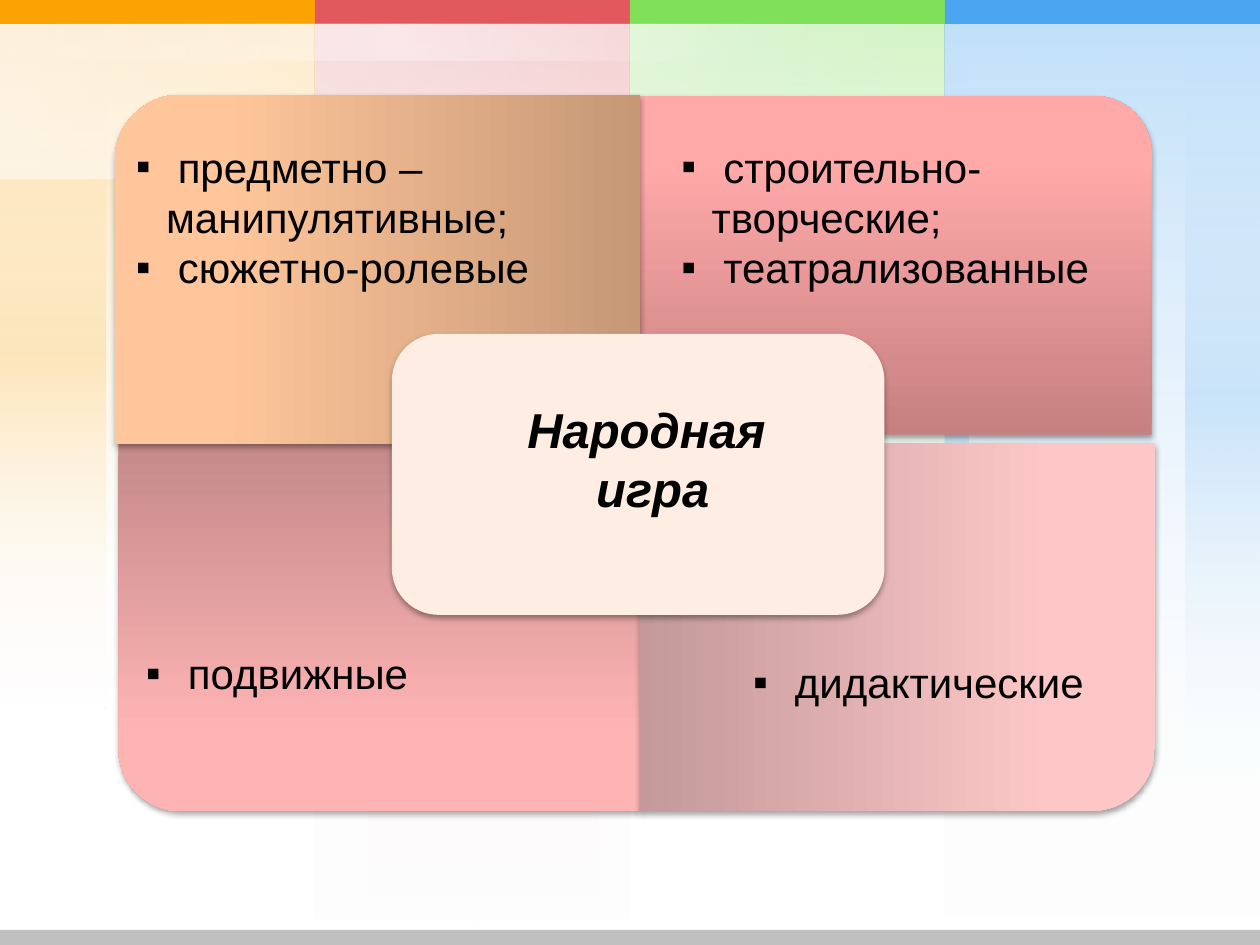
from lxml import etree
from pptx import Presentation
from pptx import util as u
from pptx.dml.color import RGBColor
from pptx.enum import shapes, text
from pptx.oxml import ns

WIDTH, HEIGHT = 10, 7.5
COLUMN = WIDTH / 4
WHITE = RGBColor(0xFF, 0xFF, 0xFF)
BLACK = RGBColor(0, 0, 0)
GREY = RGBColor(0xC0, 0xC0, 0xC0)
CREAM = RGBColor(0xFE, 0xED, 0xE2)
ORANGE = RGBColor(0xFC, 0xA3, 0x04)
RED = RGBColor(0xE1, 0x59, 0x5C)
GREEN = RGBColor(0x80, 0xE0, 0x5A)
BLUE = RGBColor(0x4B, 0xA5, 0xEF)
ROSE = [RGBColor(0xC6, 0x80, 0x80), RGBColor(0xFF, 0xA9, 0xA9), RGBColor(0xFF, 0xAB, 0xAB)]
PINK = [RGBColor(0xC5, 0x8A, 0x8A), RGBColor(0xFF, 0xB4, 0xB4), RGBColor(0xFF, 0xB6, 0xB6)]
BLUSH = [RGBColor(0xC3, 0x99, 0x99), RGBColor(0xFD, 0xC7, 0xC7), RGBColor(0xFF, 0xC8, 0xC8)]
PEACH = [RGBColor(0xC6, 0x98, 0x76), RGBColor(0xFF, 0xC6, 0x9B), RGBColor(0xFF, 0xC7, 0x9D)]


def child(parent, tag, **attributes):
    """Append a DrawingML element and return it."""
    element = etree.SubElement(parent, ns.qn("a:" + tag))
    for name, value in attributes.items():
        element.set(name, str(value))
    return element


def add_colour(parent, colour, opacity):
    """Append a colour with its opacity in percent."""
    child(child(parent, "srgbClr", val=colour), "alpha", val=opacity * 1000)


def add_block(slide, kind, box, colour=None, rotation=0):
    """Add a borderless preset shape, plain when a colour is given."""
    block = slide.shapes.add_shape(kind, *map(u.Inches, box))
    block.rotation = rotation
    block.shadow.inherit = False
    block.line.fill.background()
    if colour is not None:
        block.fill.solid()
        block.fill.fore_color.rgb = colour
    return block


def fade(block, stops, angle):
    """Fill a block with a linear gradient of (position, colour, opacity) stops."""
    properties = block._element.spPr
    gradient = etree.Element(ns.qn("a:gradFill"), rotWithShape="1")
    stop_list = child(gradient, "gsLst")
    for position, colour, opacity in stops:
        add_colour(child(stop_list, "gs", pos=position * 1000), colour, opacity)
    child(gradient, "lin", ang=angle * 60000, scaled=0)
    properties.find(ns.qn("a:prstGeom")).addnext(gradient)


def cast_shadow(block):
    """Give a block a soft shadow below it."""
    effects = block._element.spPr.find(ns.qn("a:effectLst"))
    shadow = child(effects, "outerShdw", blurRad=u.Pt(3.1), dist=u.Pt(1.8),
                   dir=90 * 60000, rotWithShape=0)
    add_colour(shadow, BLACK, 35)


def add_wash(slide, box, colour, opacity, glow, rotation=0):
    """Add a translucent band that fades out, or glows in its middle."""
    stops = [(0, colour, opacity), (100, WHITE, 0)]
    if glow:
        stops = [(0, WHITE, 0), (50, colour, opacity), (100, WHITE, 0)]
    band = add_block(slide, shapes.MSO_SHAPE.RECTANGLE, box, rotation=rotation)
    fade(band, stops, 90)


def add_column(slide, index, colour, height, glows):
    """Add one coloured column: two washes around its glowing strips."""
    left = index * COLUMN
    column = (left, 0, COLUMN, height)
    add_wash(slide, column, colour, 20, False)
    for offset, width, glow_height in glows:
        add_wash(slide, (left + offset, 0, width, glow_height), colour, 20, True)
    add_wash(slide, column, colour, 20, False)


def add_backdrop(slide):
    """Add the columns, the top stripes, the white sheen and the foot bar."""
    rectangle = shapes.MSO_SHAPE.RECTANGLE
    add_column(slide, 1, RED, 7.5, [(0.42, 1.83, 7.5)])
    add_column(slide, 2, GREEN, 5.62, [(0, 1.41, 5.62)])
    add_column(slide, 3, BLUE, 7.47, [(0, 0.19, 6.37), (1.91, 0.59, 6.37)])
    add_column(slide, 0, ORANGE, 5.62, [(2.32, 0.18, 5.62), (0, 0.84, 5.62)])
    for index, colour in enumerate((ORANGE, RED, GREEN, BLUE)):
        add_block(slide, rectangle, (index * COLUMN, 0, COLUMN, 0.19), colour)
    sheen = (3.15, -2.95, 1.22, 7.51)
    add_wash(slide, (4.16, -2.85, 0.1, 8.42), WHITE, 35, True, 270)
    add_wash(slide, sheen, WHITE, 35, False, 270)
    add_wash(slide, (3.06, -2.87, 0.29, 6.41), WHITE, 35, True, 270)
    add_wash(slide, sheen, WHITE, 35, False, 270)
    add_block(slide, rectangle, (0, HEIGHT - 0.12, WIDTH, 0.12), GREY)


def add_quadrant(slide, box, colours, rotation, corner=0.17):
    """Add one shaded quarter with a single rounded corner."""
    quadrant = add_block(slide, shapes.MSO_SHAPE.ROUND_1_RECTANGLE, box, rotation=rotation)
    quadrant.adjustments[0] = corner
    fade(quadrant, [(at, colour, 100) for at, colour in zip((0, 80, 100), colours)], 270)
    cast_shadow(quadrant)


def add_text(slide, box, lines, size, align, anchor=text.MSO_ANCHOR.TOP):
    """Add a wrapped text box and return its paragraphs."""
    frame = slide.shapes.add_textbox(*map(u.Inches, box)).text_frame
    frame.word_wrap = True
    frame.vertical_anchor = anchor
    for index, line in enumerate(lines):
        paragraph = frame.add_paragraph() if index else frame.paragraphs[0]
        paragraph.alignment = align
        run = paragraph.add_run()
        run.text = line
        run.font.name = "Arial"
        run.font.size = u.Pt(size)
        run.font.color.rgb = BLACK
    return frame.paragraphs


def add_games(slide, box, games, align=text.PP_ALIGN.LEFT, anchor=text.MSO_ANCHOR.TOP):
    """Add a bulleted list of kinds of games."""
    for game in add_text(slide, box, games, 24, align, anchor):
        properties = game._p.get_or_add_pPr()
        properties.set("marL", str(u.Inches(0.24)))
        properties.set("indent", str(-u.Inches(0.24)))
        child(properties, "buFont", typeface="Arial")
        child(properties, "buChar", char="▪")


def add_centre(slide):
    """Add the central card with the topic."""
    card = add_block(slide, shapes.MSO_SHAPE.ROUNDED_RECTANGLE, (3.11, 2.65, 3.91, 2.23), CREAM)
    cast_shadow(card)
    topic = add_text(slide, (3.19, 3.12, 3.78, 1.51), ["Народная", "игра"], 28,
                     text.PP_ALIGN.CENTER)
    for paragraph, margin in zip(topic, (0.1, 0.2)):
        paragraph._p.get_or_add_pPr().set("marL", str(u.Inches(margin)))
        paragraph.runs[0].font.bold = True
        paragraph.runs[0].font.italic = True


def main():
    """Build the slide and save it."""
    deck = Presentation()
    deck.slide_width, deck.slide_height = u.Inches(WIDTH), u.Inches(HEIGHT)
    slide = deck.slides.add_slide(deck.slide_layouts[6])
    add_backdrop(slide)
    add_quadrant(slide, (5, 0.76, 4.14, 2.69), ROSE, 0)
    add_quadrant(slide, (0.94, 3.52, 4.14, 2.92), PINK, 180)
    add_quadrant(slide, (5.66, 2.93, 2.92, 4.09), BLUSH, 90)
    add_quadrant(slide, (1.61, 0.05, 2.77, 4.17), PEACH, 270, 0.19)
    add_centre(slide)
    add_games(slide, (0.98, 1.07, 3.39, 1.31), [" предметно – манипулятивные;", " сюжетно-ролевые"])
    add_games(slide, (5.31, 1.07, 3.7, 1.31), [" строительно-творческие;", " театрализованные"])
    add_games(slide, (1.06, 5.09, 3.39, 0.81), [" подвижные"])
    add_games(slide, (5.47, 4.85, 3.23, 0.81), [" дидактические"],
              text.PP_ALIGN.RIGHT, text.MSO_ANCHOR.BOTTOM)
    deck.save("out.pptx")


if __name__ == "__main__":
    main()
